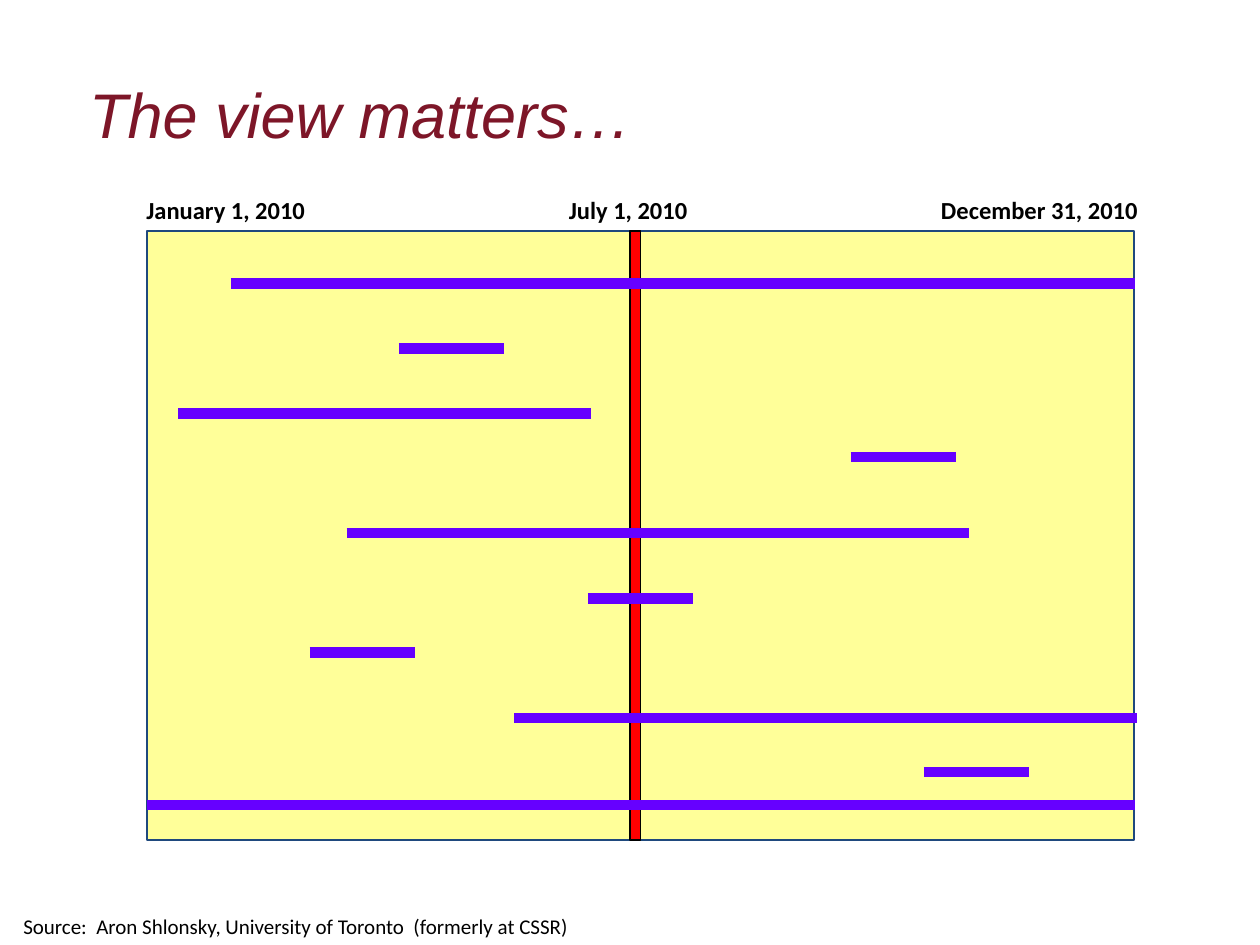
from typing import NamedTuple

from lxml import etree
from pptx import Presentation
from pptx.dml.color import RGBColor
from pptx.enum.shapes import MSO_CONNECTOR, MSO_SHAPE
from pptx.enum.text import MSO_ANCHOR, PP_ALIGN
from pptx.oxml.ns import qn
from pptx.util import Pt

LEFT, CENTER = PP_ALIGN.LEFT, PP_ALIGN.CENTER
TOP = MSO_ANCHOR.TOP
RECT = MSO_SHAPE.RECTANGLE
STRAIGHT = MSO_CONNECTOR.STRAIGHT

COLORS = {
    "title": "7D1628",
    "text": "000000",
    "panel": "FFFF99",
    "panel_edge": "1F497D",
    "marker": "FF0000",
    "spell": "6600FF",
}


class Box(NamedTuple):
    left: float
    top: float
    width: float
    height: float


class Spell(NamedTuple):
    start: float
    end: float
    y: float


class Label(NamedTuple):
    text: str
    box: Box
    size: float = 14
    bold: bool = True
    align: PP_ALIGN = CENTER
    wrap: bool = True


YEAR = Box(84, 132, 564, 348)
MIDYEAR = Box(360, YEAR.top, 6, YEAR.height)

SPELLS = [
    Spell(132, 648.5, 162),
    Spell(228, 288, 199.2),
    Spell(102, 337.5, 236.2),
    Spell(486, 546.3, 261.2),
    Spell(198, 554, 304.6),
    Spell(336, 396, 342),
    Spell(177, 237, 373),
    Spell(294, 650, 410.2),
    Spell(528, 588, 441.2),
    Spell(84, 648.5, 459.9),
]

LABELS = [
    Label("January 1, 2010", Box(66, 108, 126, 24)),
    Label("December 31, 2010", Box(504, 108, 180, 24)),
    Label("July 1, 2010", Box(318, 108, 83, 24), align=LEFT, wrap=False),
    Label("Source:  Aron Shlonsky, University of Toronto  (formerly at CSSR)",
          Box(6.2, 518.2, 341.5, 21.8), size=12, bold=False, align=LEFT),
]


def rgb(name: str) -> RGBColor:
    """Look up a palette colour."""
    return RGBColor.from_string(COLORS[name])


def write(tf, text: str, *, font: str = "Calibri", size: float = 14,
          color: str = "text", bold: bool = False, italic: bool = False,
          align: PP_ALIGN = LEFT, wrap: bool = True) -> None:
    """Put one formatted paragraph in a text frame."""
    tf.word_wrap = wrap
    tf.vertical_anchor = TOP
    p = tf.paragraphs[0]
    p.alignment = align
    r = p.add_run()
    r.text = text
    r.font.name = font
    r.font.size = Pt(size)
    r.font.bold = bold
    r.font.italic = italic
    r.font.color.rgb = rgb(color)


def add_title(s, text: str, box: Box) -> None:
    """Place and fill the title placeholder."""
    sp = s.shapes.title
    sp.left, sp.top, sp.width, sp.height = map(Pt, box)
    tf = sp.text_frame
    write(tf, text, font="Arial", size=36, color="title", italic=True)
    tf.margin_left = Pt(15)
    tf.margin_top = Pt(6.5)


def add_panel(s, box: Box, fill: str, edge: str) -> None:
    """Draw a filled rectangle with a thin outline."""
    sp = s.shapes.add_shape(RECT, *map(Pt, box))
    sp.shadow.inherit = False
    sp.fill.solid()
    sp.fill.fore_color.rgb = rgb(fill)
    sp.line.color.rgb = rgb(edge)
    sp.line.width = Pt(0.75)


def add_spell(s, spell: Spell) -> None:
    """Draw one spell as a thick horizontal line."""
    y = Pt(spell.y)
    line = s.shapes.add_connector(STRAIGHT, Pt(spell.start), y, Pt(spell.end), y)
    line.line.color.rgb = rgb("spell")
    line.line.width = Pt(6)
    etree.SubElement(line._element.spPr, qn("a:effectLst"))


def add_label(s, label: Label) -> None:
    """Add a text box for a date or the source."""
    sp = s.shapes.add_textbox(*map(Pt, label.box))
    write(sp.text_frame, label.text, size=label.size, bold=label.bold,
          align=label.align, wrap=label.wrap)


def main() -> None:
    """Build and save the slide."""
    prs = Presentation()
    prs.slide_width, prs.slide_height = Pt(720), Pt(540)
    s = prs.slides.add_slide(prs.slide_layouts[5])
    add_title(s, "The view matters…", Box(36, 36.7, 648, 65.5))
    add_panel(s, YEAR, "panel", "panel_edge")
    add_panel(s, MIDYEAR, "marker", "text")
    for spell in SPELLS:
        add_spell(s, spell)
    for label in LABELS:
        add_label(s, label)
    prs.save("out.pptx")


if __name__ == "__main__":
    main()
